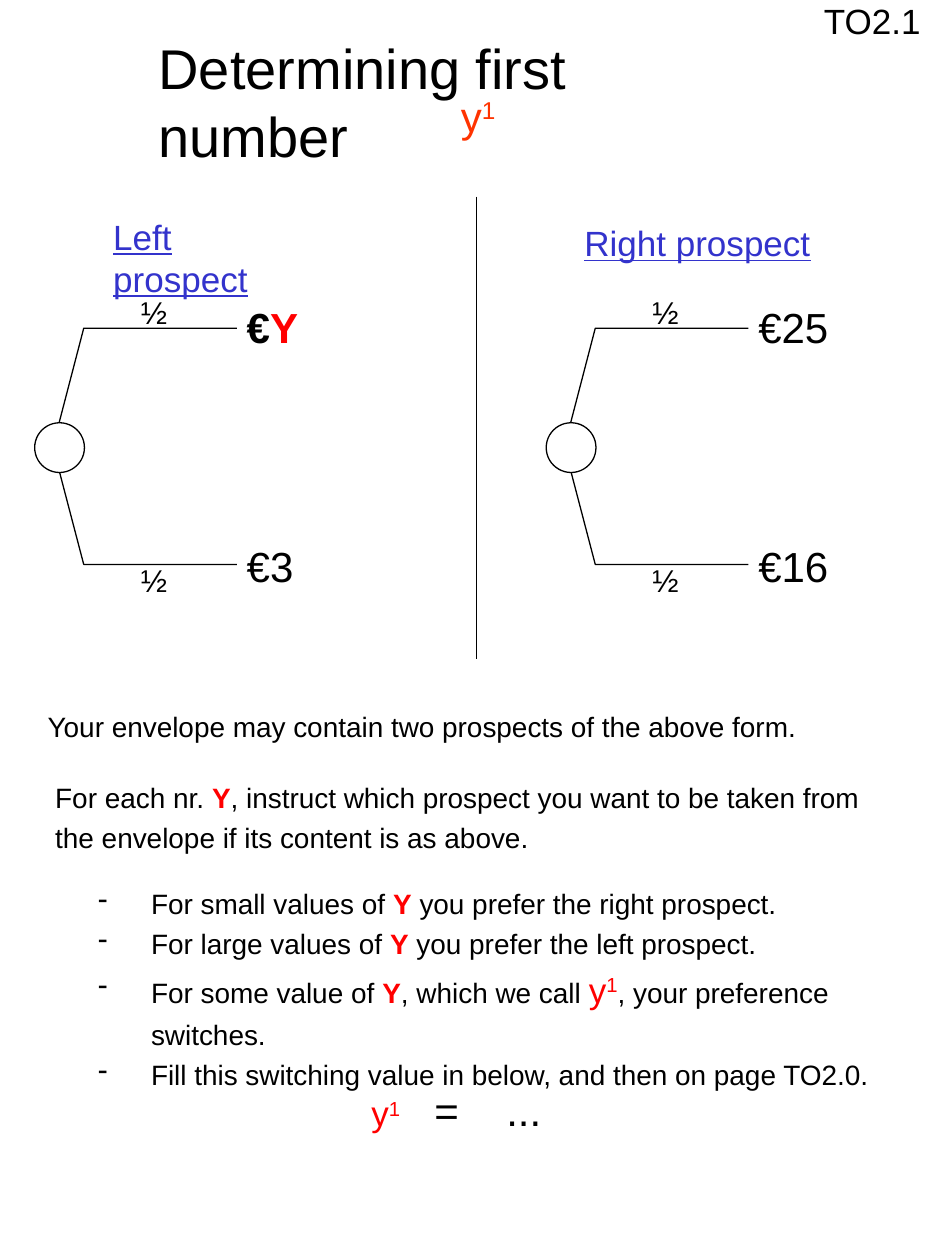
"""Build the one-page instruction slide on choosing between two prospects."""
from lxml.etree import SubElement
from pptx import Presentation
from pptx.dml.color import RGBColor
from pptx.enum.shapes import MSO_CONNECTOR as Line, MSO_SHAPE as Shape
from pptx.enum.text import MSO_AUTO_SIZE as AutoSize
from pptx.oxml.ns import qn
from pptx.util import Inches, Pt

THEME = {
    "font": "Arial",
    "ink": RGBColor(0, 0, 0),
    "paper": RGBColor(255, 255, 255),
    "blue": RGBColor(0x33, 0x33, 0xCC),
    "red": RGBColor(255, 0, 0),
    "orange": RGBColor(255, 0x33, 0),
    "title": Pt(32), "amount": Pt(24), "label": Pt(20), "chance": Pt(18), "body": Pt(16),
    "stroke": Pt(0.75),
}

deck = Presentation()
deck.slide_width, deck.slide_height = Inches(7.5), Inches(10)
COL, ROW = deck.slide_width / 75, deck.slide_height / 100
slide = deck.slides.add_slide(deck.slide_layouts[6])
shapes = slide.shapes


def write(cell, paragraphs, wrap=False, spacing=None):
    left, top, width, height = cell
    box = shapes.add_textbox(int(left * COL), int(top * ROW), int(width * COL), int(height * ROW))
    frame = box.text_frame
    frame.word_wrap = wrap
    frame.auto_size = AutoSize.SHAPE_TO_FIT_TEXT
    for index, parts in enumerate(paragraphs):
        paragraph = frame.paragraphs[0] if index == 0 else frame.add_paragraph()
        if spacing:
            paragraph.line_spacing = spacing
        for words, size, color, *extras in parts:
            run = paragraph.add_run()
            run.text = words
            look = {"name": THEME["font"], "size": THEME[size],
                    "bold": "bold" in extras, "underline": "underline" in extras}
            for key, value in look.items():
                setattr(run.font, key, value)
            run.font.color.rgb = THEME[color]
            if "super" in extras:
                run.font._element.set("baseline", "30000")
    return frame


def outline(part):
    part.line.color.rgb = THEME["ink"]
    part.line.width = THEME["stroke"]


prospects = [
    (4.2, "Left prospect", (8, 16.6, 17, 4.3),
     [("€", "amount", "ink", "bold"), ("Y", "amount", "red", "bold")],
     [("€3", "amount", "ink")], (6.1, 5.7)),
    (44.8, "Right prospect", (45.4, 17.1, 22, 4.3),
     [("€25", "amount", "ink")], [("€16", "amount", "ink")], (7.6, 7.6)),
]
for node, heading, heading_cell, upper, lower, widths in prospects:
    write(heading_cell, [[(heading, "label", "blue", "underline")]], wrap=True)
    branches = zip((26.05, 44.8), (22.8, 44), (23.45, 42.4), (upper, lower), widths)
    for branch_row, chance_row, amount_row, amount, width in branches:
        builder = shapes.build_freeform(int(node * COL), int(35.45 * ROW))
        corners = [(int((node + step) * COL), int(branch_row * ROW)) for step in (2.45, 14.6)]
        builder.add_line_segments(corners, close=False)
        branch = builder.convert_to_shape()
        branch.shadow.inherit = False
        branch.fill.background()
        outline(branch)
        write((node + 6, chance_row, 4.1, 4), [[("½", "chance", "ink")]])
        write((node + 14.4, amount_row, width, 5), [amount])
    circle = shapes.add_shape(Shape.OVAL, int((node - 1.45) * COL), int(33.55 * ROW),
                              int(3.95 * COL), int(3.95 * ROW))
    circle.shadow.inherit = False
    circle.fill.solid()
    circle.fill.fore_color.rgb = THEME["paper"]
    outline(circle)

divider = shapes.add_connector(Line.STRAIGHT, int(37.8 * COL), int(15.6 * ROW),
                               int(37.8 * COL), int(52.3 * ROW))
SubElement(divider._element.spPr, qn("a:effectLst"))
outline(divider)

write((64.4, -0.5, 9.7, 4.3), [[("TO2.1", "label", "ink")]])
write((11.6, 2.2, 48, 6.3), [[("Determining first number", "title", "ink")]], wrap=True)
write((35.6, 6.7, 4.9, 5), [[("y", "amount", "orange"), ("1", "amount", "orange", "super")]])

variable = ("Y", "body", "red", "bold")
switch_value = [("y", "label", "red"), ("1", "label", "red", "super")]

write((2.8, 55.3, 61.8, 4.2),
      [[("Your envelope may contain two prospects of the above form.", "body", "ink")]], spacing=1.2)
write((3.4, 60.9, 68.4, 7.4), [[
    ("For each nr. ", "body", "ink"), variable,
    (", instruct which prospect you want to be taken from the envelope"
     " if its content is as above.", "body", "ink")]], wrap=True, spacing=1.2)

steps = write((6.8, 69.3, 64.5, 17.8), [
    [("For small values of ", "body", "ink"), variable,
     (" you prefer the right prospect.", "body", "ink")],
    [("For large values of ", "body", "ink"), variable,
     (" you prefer the left prospect.", "body", "ink")],
    [("For some value of ", "body", "ink"), variable, (", which we call ", "body", "ink"),
     *switch_value, (", your preference switches.", "body", "ink")],
    [("Fill this switching value in below, and then on page TO2.0.", "body", "ink")],
], wrap=True, spacing=1.2)
for step in steps.paragraphs:
    properties = step._p.get_or_add_pPr()
    properties.set("marL", str(int(4.2 * COL)))
    properties.set("indent", str(int(-4.2 * COL)))
    SubElement(properties, qn("a:buChar"), char="-")

answer = write((28.5, 85.6, 15.6, 5), [[*switch_value, ("\t=\t...", "amount", "ink")]])
tabs = SubElement(answer.paragraphs[0]._p.get_or_add_pPr(), qn("a:tabLst"))
for stop in (5, 10.7):
    SubElement(tabs, qn("a:tab"), pos=str(int(stop * COL)), algn="l")

deck.save("out.pptx")
